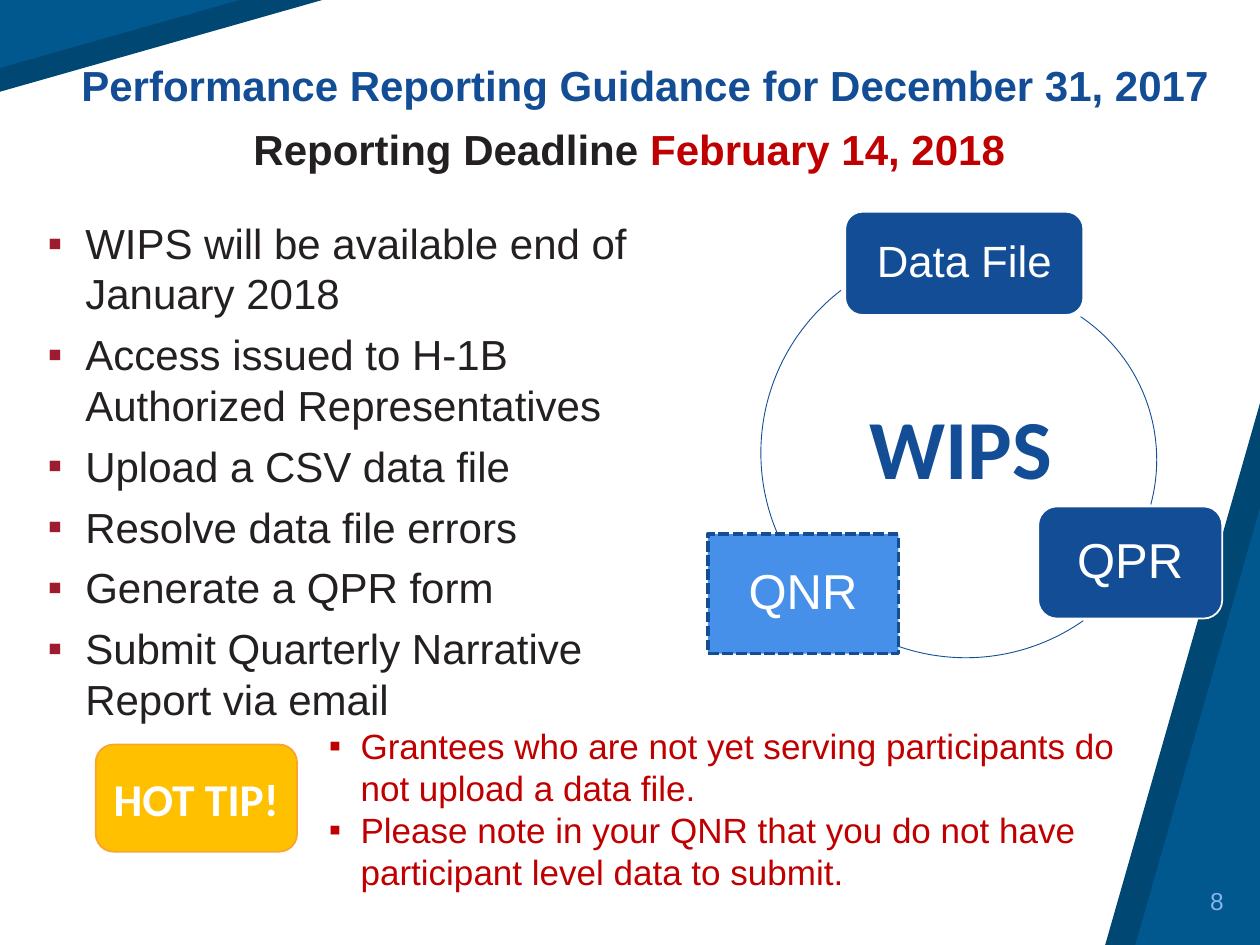
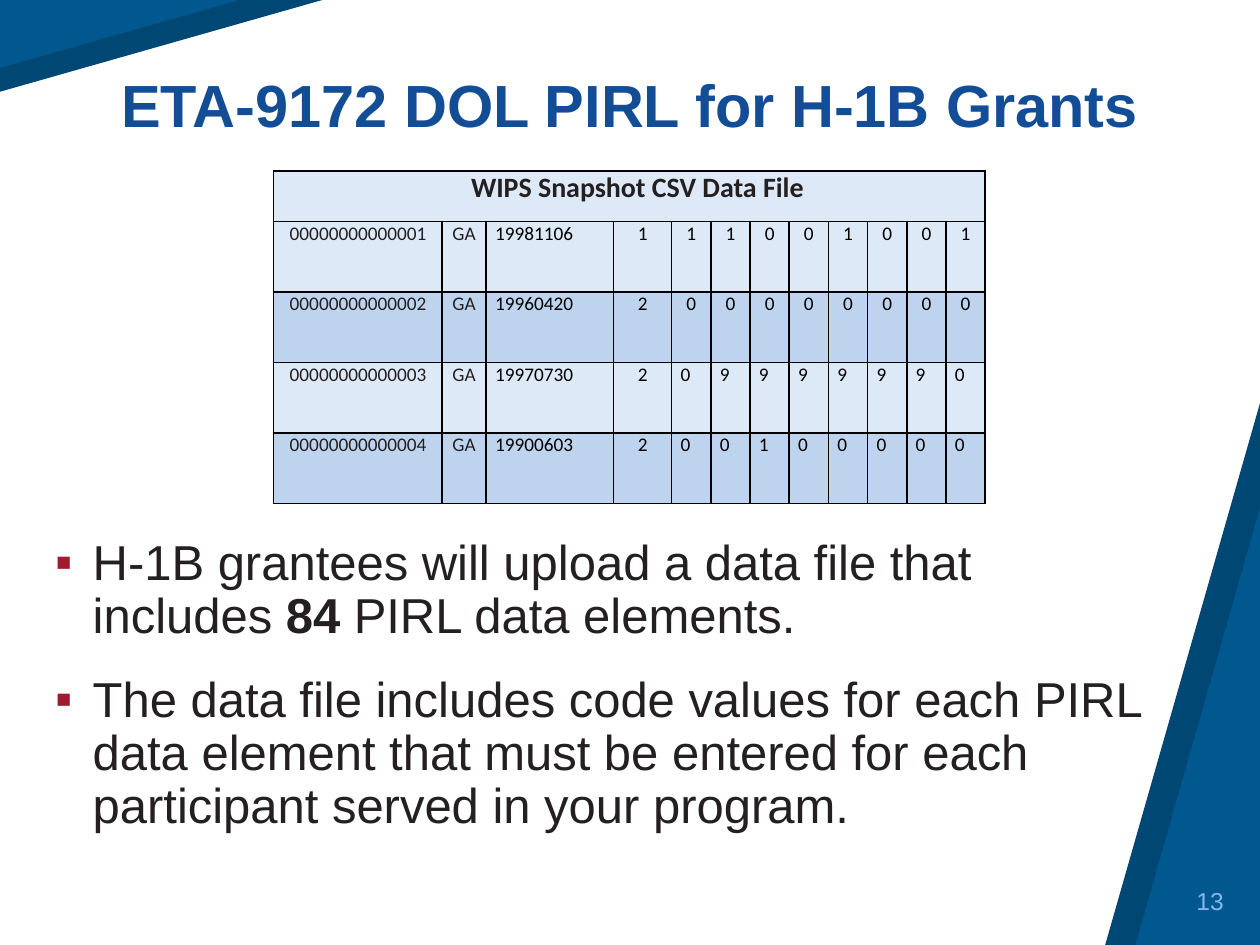
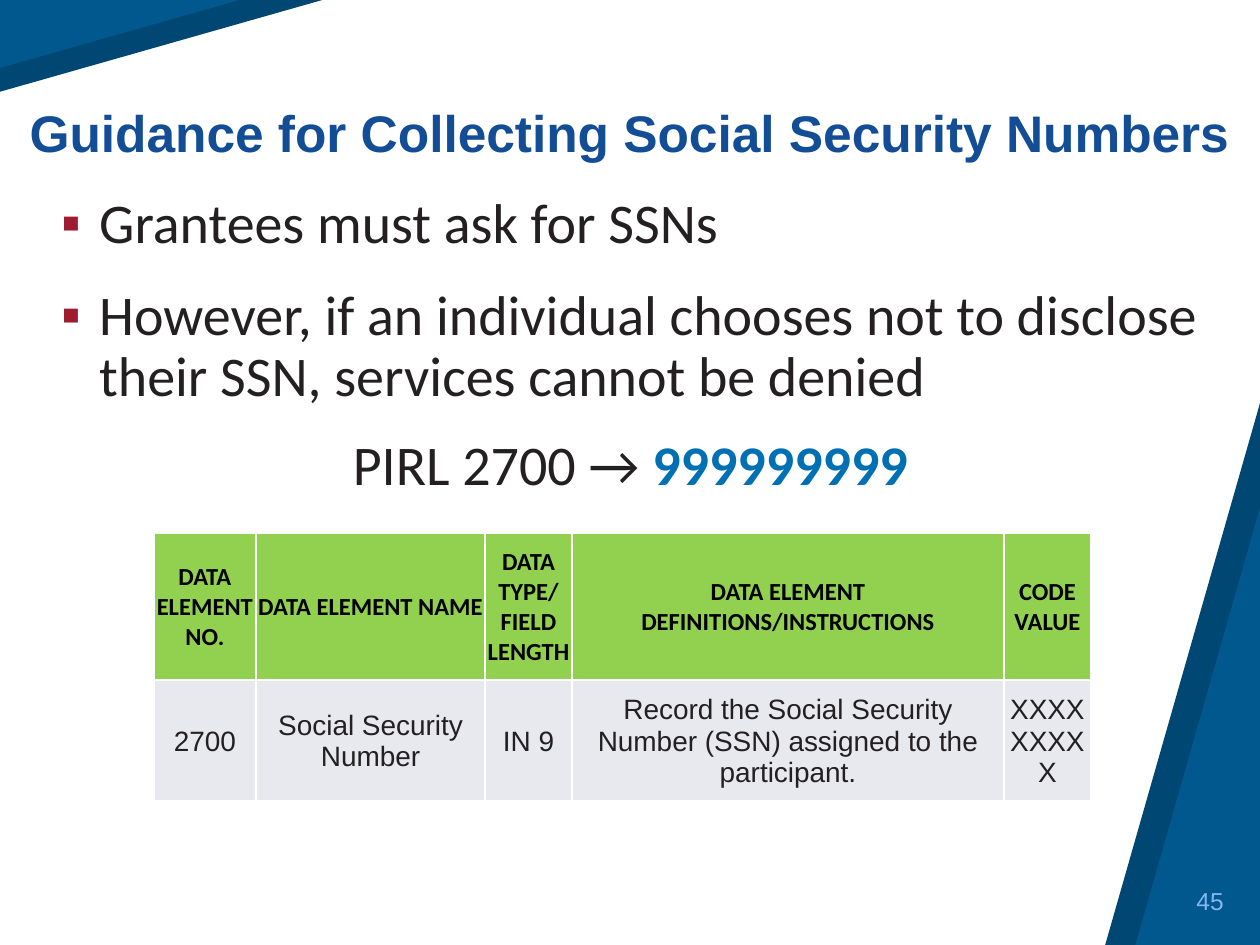
from lxml.etree import SubElement
from pptx import Presentation
from pptx.dml.color import RGBColor
from pptx.enum.dml import MSO_LINE
from pptx.enum.shapes import MSO_SHAPE
from pptx.enum.text import MSO_ANCHOR, PP_ALIGN
from pptx.oxml.ns import qn
from pptx.util import Cm, Pt

color = RGBColor.from_string
NAVY, DARK_BAND, BAND = "124D95", "004773", "00588F"
INK, RED, BULLET_RED, WHITE, BLACK = "242021", "C00000", "9E1C30", "FFFFFF", "000000"
PALE_ROW, BLUE_ROW = "DDE9F7", "BED4EE"
CENTER, LEFT, RIGHT = PP_ALIGN.CENTER, PP_ALIGN.LEFT, PP_ALIGN.RIGHT
MIDDLE, BOTTOM = MSO_ANCHOR.MIDDLE, MSO_ANCHOR.BOTTOM


def draw(slide, kind, box, fill=None, line=None, width=1):
    """Add a preset shape, or a text box when kind is None; box is in centimetres."""
    box = [Cm(length) for length in box]
    if kind is None:
        return slide.shapes.add_textbox(*box)
    shape = slide.shapes.add_shape(kind, *box)
    shape.shadow.inherit = False
    if fill:
        shape.fill.solid()
        shape.fill.fore_color.rgb = color(fill)
    else:
        shape.fill.background()
    if line:
        shape.line.color.rgb = color(line)
        shape.line.width = Pt(width)
    else:
        shape.line.fill.background()
    return shape


def write(frame, lines, size, ink=INK, font="Arial", bold=False, align=LEFT, anchor=None,
          bullet=None, indent=0.76, spacing=None, before=0, after=0, accent=None):
    """Fill a text frame; a line is a string or a tuple whose odd items are bold accents."""
    frame.word_wrap = True
    if anchor is not None:
        frame.vertical_anchor = anchor
    for number, line in enumerate(lines):
        paragraph = frame.add_paragraph() if number else frame.paragraphs[0]
        paragraph.alignment = align
        paragraph.space_before = Pt(before if number else 0)
        paragraph.space_after = Pt(after)
        if spacing:
            paragraph.line_spacing = spacing
        if bullet:
            properties = paragraph._p.get_or_add_pPr()
            properties.set("marL", str(Cm(indent)))
            properties.set("indent", str(-Cm(indent)))
            SubElement(SubElement(properties, qn("a:buClr")), qn("a:srgbClr"), val=bullet)
            SubElement(properties, qn("a:buFont"), typeface="Arial")
            SubElement(properties, qn("a:buChar"), char="▪")
        paragraph.font.name = font
        paragraph.font.size = Pt(size)
        paragraph.font.bold = bold
        paragraph.font.color.rgb = color(ink)
        for index, text in enumerate((line,) if isinstance(line, str) else line):
            run = paragraph.add_run()
            run.text = text
            if index % 2:
                run.font.bold = True
                run.font.color.rgb = color(accent or ink)
    return frame


presentation = Presentation()
presentation.slide_width, presentation.slide_height = Cm(25.4), Cm(19.05)

# Corner bands, page number and title of every slide
titles = [
    ("8", "Performance Reporting Guidance for December 31, 2017", 24, (1.09, 0.81, 23.83, 1.55), 0.9),
    ("13", "ETA-9172 DOL PIRL for H-1B Grants", 34, (0, 0.03, 25.4, 2.92), 0.9),
    ("45", "Guidance for Collecting Social Security Numbers", 29.4, (0, 0.48, 25.4, 2.92), 1.0),
]
for page, title, size, box, spacing in titles:
    slide = presentation.slides.add_slide(presentation.slide_layouts[6])
    for fill, width, height in ((DARK_BAND, 3.12, 10.92), (BAND, 2.51, 8.81)):
        band = draw(slide, MSO_SHAPE.ISOSCELES_TRIANGLE,
                    (25.4 - width, 19.05 - height, width, height), fill)
        band.adjustments[0] = 1
    for fill, width, height in ((DARK_BAND, 6.5, 1.85), (BAND, 4.83, 1.37)):
        shift = (width - height) / 2
        corner = draw(slide, MSO_SHAPE.RIGHT_TRIANGLE, (shift, -shift, height, width), fill)
        corner.rotation = 90
    write(draw(slide, None, (21.36, 17.65, 3.56, 1.02)).text_frame, [page], 14, "85B5F0",
          align=RIGHT, anchor=MIDDLE)
    write(draw(slide, None, box).text_frame, [title], size, NAVY, bold=True,
          align=CENTER, anchor=BOTTOM, spacing=spacing)
deadline_slide, pirl_slide, ssn_slide = presentation.slides

# Reporting deadline
write(draw(deadline_slide, None, (0.48, 2.36, 24.41, 1.27)).text_frame,
      [("Reporting Deadline ", "February 14, 2018")], 24, bold=True, align=CENTER, accent=RED)
write(draw(deadline_slide, None, (0.71, 4.26, 13.18, 10.53)).text_frame, [
    "WIPS will be available end of January 2018",
    "Access issued to H-1B Authorized Representatives",
    "Upload a CSV data file",
    "Resolve data file errors",
    "Generate a QPR form",
    "Submit Quarterly Narrative Report via email",
], 24, bullet=BULLET_RED, after=6)

for box, start, end in (((16.36, 5.79, 6.96, 6.96), 304, 15),
                        ((15.34, 5, 8.26, 8.26), 55, 232.5)):
    arc = draw(deadline_slide, MSO_SHAPE.ARC, box, line=NAVY, width=0.5)
    # One adjustment unit is 100000 sixty-thousandths of a degree
    arc.adjustments[0], arc.adjustments[1] = start * 0.6, end * 0.6

nodes = [
    ("Data File", 25, MSO_SHAPE.ROUNDED_RECTANGLE, (17.04, 4.27, 4.8, 2.08), NAVY, WHITE, 1),
    ("QPR", 28, MSO_SHAPE.ROUNDED_RECTANGLE, (20.93, 10.21, 3.71, 2.26), NAVY, WHITE, 1),
    ("QNR", 28, MSO_SHAPE.RECTANGLE, (14.27, 10.77, 3.84, 2.41), "4790E9", NAVY, 2),
]
for label, size, kind, box, fill, line, width in nodes:
    node = draw(deadline_slide, kind, box, fill, line, width)
    write(node.text_frame, [label], size, WHITE, align=CENTER, anchor=MIDDLE, spacing=0.9)
    if label == "QNR":
        node.line.dash_style = MSO_LINE.SQUARE_DOT
write(draw(deadline_slide, None, (16.79, 7.85, 5.16, 2.31)).text_frame, ["WIPS"], 48, NAVY,
      "Calibri", bold=True, align=CENTER)

write(draw(deadline_slide, None, (6.38, 14.48, 17.09, 3.68)).text_frame, [
    "Grantees who are not yet serving participants do not upload a data file.",
    "Please note in your QNR that you do not have participant level data to submit.",
], 20, RED, bullet=RED, indent=0.64)
hot_tip = draw(deadline_slide, MSO_SHAPE.ROUNDED_RECTANGLE, (1.93, 15.01, 4.06, 2.16),
               "FFC000", "FAA32E")
write(hot_tip.text_frame, ["HOT TIP!"], 26, WHITE, "Calibri", bold=True, align=CENTER,
      anchor=MIDDLE)

# PIRL data file
write(draw(pirl_slide, None, (0.86, 10.72, 22.56, 6.68)).text_frame, [
    ("H-1B grantees will upload a data file that includes ", "84", " PIRL data elements."),
    "The data file includes code values for each PIRL data element that must be entered "
    "for each participant served in your program.",
], 28, bullet=BULLET_RED, spacing=0.9, before=18)

# Social Security numbers
ssn_frame = write(draw(ssn_slide, None, (0.99, 3.81, 23.44, 6.6)).text_frame, [
    "Grantees must ask for SSNs",
    "However, if an individual chooses not to disclose their SSN, services cannot be denied",
], 32, font="Calibri", bullet=BULLET_RED, spacing=0.9, before=18)
code_frame = draw(ssn_slide, None, (0.99, 8.68, 23.44, 1.7)).text_frame
write(code_frame, [("PIRL 2700 → ", "999999999")], 32, font="Calibri", align=CENTER,
      spacing=0.9, accent="0070B5")

# Both tables: place, column widths, row heights, row fills, border, margin
snapshot_rows = [
    ["WIPS Snapshot CSV Data File"],
    ["00000000000001", "GA", "19981106", "1", *"11001001"],
    ["00000000000002", "GA", "19960420", "2", *"00000000"],
    ["00000000000003", "GA", "19970730", "2", *"09999990"],
    ["00000000000004", "GA", "19900603", "2", *"00100000"],
]
element_rows = [
    ["DATA ELEMENT NO.", "DATA ELEMENT NAME", "DATA TYPE/ FIELD LENGTH",
     "DATA ELEMENT DEFINITIONS/INSTRUCTIONS", "CODE VALUE"],
    ["2700", "Social Security Number", "IN 9",
     "Record the Social Security Number (SSN) assigned to the participant.", "XXXXXXXXX"],
]
table_plans = [
    (pirl_slide, 5.51, 3.45, [3.4, 0.89, 2.57, 1.17] + [0.79] * 8, [1.02] + [1.42] * 4,
     [PALE_ROW, PALE_ROW, BLUE_ROW, PALE_ROW, BLUE_ROW], BLACK, 0),
    (ssn_slide, 3.1, 10.74, [2.06, 4.62, 1.75, 8.71, 1.75], [2.97, 2.44],
     ["92D050", "E7E9EF"], WHITE, 0.03),
]
tables = []
for slide, left, top, widths, heights, fills, border, margin in table_plans:
    table = slide.shapes.add_table(len(heights), len(widths), Cm(left), Cm(top),
                                   Cm(sum(widths)), Cm(sum(heights))).table
    table.first_row = table.horz_banding = False
    for column, width in zip(table.columns, widths):
        column.width = Cm(width)
    for row, height, fill in zip(table.rows, heights, fills):
        row.height = Cm(height)
        for cell in row.cells:
            cell.margin_left = cell.margin_right = cell.margin_top = Cm(margin)
            cell.margin_bottom = 0
            for side in ("a:lnL", "a:lnR", "a:lnT", "a:lnB"):
                edge = SubElement(cell._tc.get_or_add_tcPr(), qn(side), w=str(Pt(1)))
                SubElement(SubElement(edge, qn("a:solidFill")), qn("a:srgbClr"), val=border)
            cell.fill.solid()
            cell.fill.fore_color.rgb = color(fill)
    tables.append(table)
snapshot_table, element_table = tables

snapshot_table.cell(0, 0).merge(snapshot_table.cell(0, 11))
for row, values in enumerate(snapshot_rows):
    for column, value in enumerate(values):
        cell = snapshot_table.cell(row, column)
        flush_left = row > 0 and (column in (0, 2) or (row > 2 and column > 3))
        if column == 0:
            cell.margin_left = Cm(0.33)
        elif flush_left:
            cell.margin_left = Cm(0.18)
        write(cell.text_frame, [value], 11 if row else 16, INK if column < 2 else BLACK,
              "Calibri", bold=row == 0, align=LEFT if flush_left else CENTER)

for row, values in enumerate(element_rows):
    size, ink, font = ((14, BLACK, "Calibri"), (16, INK, "Arial"))[row]
    for column, value in enumerate(values):
        cell = element_table.cell(row, column)
        cell.vertical_anchor = MIDDLE
        write(cell.text_frame, [value], size, ink, font, bold=row == 0, align=CENTER)

presentation.save("out.pptx")
